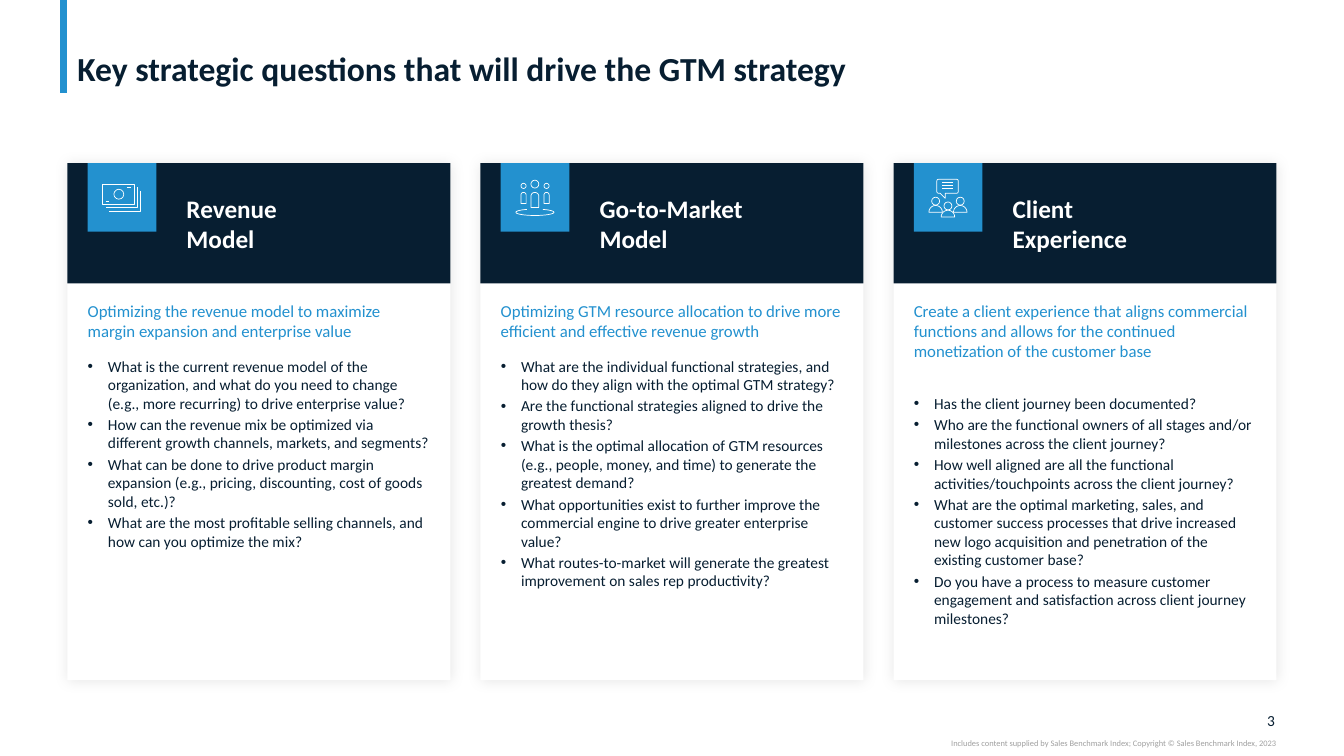
from math import cos, radians, sin

from lxml import etree
from pptx import Presentation
from pptx.dml.color import RGBColor
from pptx.enum.shapes import MSO_CONNECTOR, MSO_SHAPE
from pptx.enum.text import MSO_ANCHOR, MSO_AUTO_SIZE, PP_ALIGN
from pptx.oxml import parse_xml
from pptx.oxml.ns import nsdecls, qn
from pptx.util import Cm, Pt

RECT, OVAL = MSO_SHAPE.RECTANGLE, MSO_SHAPE.OVAL
STRAIGHT = MSO_CONNECTOR.STRAIGHT
TOP, MIDDLE, BOTTOM = MSO_ANCHOR.TOP, MSO_ANCHOR.MIDDLE, MSO_ANCHOR.BOTTOM
LEFT, RIGHT = PP_ALIGN.LEFT, PP_ALIGN.RIGHT
NO_FIT = MSO_AUTO_SIZE.NONE

NAVY = RGBColor(0x07, 0x1E, 0x31)
BLUE = RGBColor(0x23, 0x91, 0xCF)
GREY = RGBColor(0xA0, 0xA0, 0xA0)
WHITE = RGBColor(0xFF, 0xFF, 0xFF)

CARD_X, CARD_Y, CARD_W, CARD_H, PITCH = 1.7, 4.11, 9.65, 13.03, 10.41
PAD, TEXT_W, TILE = 0.51, 8.64, 1.73

SHADOW = (
    f'<a:effectLst {nsdecls("a")}><a:outerShdw blurRad="127000" dist="0" algn="ctr" rotWithShape="0">'
    '<a:srgbClr val="000000"><a:alpha val="10000"/></a:srgbClr></a:outerShdw></a:effectLst>'
)


def arc(x, y, rx, ry, start, end, steps=16):
    turns = [radians(start + (end - start) * i / steps) for i in range(steps + 1)]
    return [(x + rx * cos(t), y + ry * sin(t)) for t in turns]


def arch(x, y, w, h):
    r = w / 2
    return arc(x + r, y + r, r, r, 180, 360) + [(x + w, y + h), (x, y + h)]


class Deck:
    def __init__(self, slide):
        self.slide = slide
        self.shapes = slide.shapes
        self.font = {"name": "Calibri", "bold": False}

    def fill_text(self, shape, lines, size, color, bold=False, anchor=TOP, align=LEFT,
                  inset=0, spacing=1.0, after=0, bullet=False):
        frame = shape.text_frame
        box = {"word_wrap": True, "auto_size": NO_FIT, "vertical_anchor": anchor,
               "margin_left": Cm(inset), "margin_right": Cm(inset),
               "margin_top": 0, "margin_bottom": 0}
        para = {"alignment": align, "line_spacing": spacing,
                "space_before": Pt(0), "space_after": Pt(after)}
        font = {**self.font, "size": Pt(size), "bold": bold}
        for key, value in box.items():
            setattr(frame, key, value)
        for i, line in enumerate(lines):
            p = frame.add_paragraph() if i else frame.paragraphs[0]
            if bullet:
                self.mark(p)
            for key, value in para.items():
                setattr(p, key, value)
            run = p.add_run()
            run.text = line
            for key, value in font.items():
                setattr(run.font, key, value)
            run.font.color.rgb = color

    def mark(self, p):
        props = p._p.get_or_add_pPr()
        props.set("marL", str(Cm(PAD)))
        props.set("indent", str(-Cm(PAD)))
        tint = etree.SubElement(props, qn("a:buClr"))
        etree.SubElement(tint, qn("a:srgbClr"), val=str(NAVY))
        etree.SubElement(props, qn("a:buFont"), typeface="Arial")
        etree.SubElement(props, qn("a:buChar"), char="•")

    def text(self, x, y, w, h, lines, size, color, **style):
        box = self.shapes.add_textbox(Cm(x), Cm(y), Cm(w), Cm(h))
        self.fill_text(box, lines, size, color, **style)

    def holder(self, index, x, y, w, h, lines, size, color, **style):
        shape = next(s for s in self.slide.placeholders if s.placeholder_format.idx == index)
        place = {"left": x, "top": y, "width": w, "height": h}
        for key, value in place.items():
            setattr(shape, key, Cm(value))
        self.fill_text(shape, lines, size, color, **style)
        shape.element.getparent().append(shape.element)

    def block(self, x, y, w, h, color, glow=False):
        shape = self.shapes.add_shape(RECT, Cm(x), Cm(y), Cm(w), Cm(h))
        shape.shadow.inherit = False
        shape.fill.solid()
        shape.fill.fore_color.rgb = color
        shape.line.fill.background()
        if glow:
            props = shape.element.spPr
            props.remove(props.find(qn("a:effectLst")))
            props.append(parse_xml(SHADOW))

    def line(self, x1, y1, x2, y2, color, width, group=None):
        shapes = group.shapes if group else self.shapes
        line = shapes.add_connector(STRAIGHT, Cm(x1), Cm(y1), Cm(x2), Cm(y2))
        line.line.color.rgb = color
        line.line.width = Pt(width)
        etree.SubElement(line.element.spPr, qn("a:effectLst"))

    def thin(self, shape):
        shape.shadow.inherit = False
        shape.fill.background()
        shape.line.color.rgb = WHITE
        shape.line.width = Pt(0.5)

    def icon(self, x, y, parts):
        group = self.shapes.add_group_shape()
        for kind, data in parts:
            if kind == "trace":
                points, closed = data
                spots = [(Cm(x + a), Cm(y + b)) for a, b in points]
                pen = group.shapes.build_freeform(*spots[0])
                pen.add_line_segments(spots[1:], close=closed)
                self.thin(pen.convert_to_shape())
            elif kind == "line":
                a, b, c, d = data
                self.line(x + a, y + b, x + c, y + d, WHITE, 0.5, group)
            else:
                a, b, w, h = data
                self.thin(group.shapes.add_shape(kind, Cm(x + a), Cm(y + b), Cm(w), Cm(h)))


MONEY = [
    (RECT, (0.38, 0.53, 0.79, 0.51)),
    *[("trace", ([(1.17 + s, 0.53 + s), (1.17 + s, 1.04 + s), (0.38 + s, 1.04 + s)], False))
      for s in (0.08, 0.17)],
    (OVAL, (0.66, 0.66, 0.25, 0.25)),
    ("line", (0.46, 0.97, 0.53, 0.97)),
    ("line", (0.99, 0.61, 1.09, 0.61)),
]
TEAM = [
    *[(OVAL, (x, y, w, w)) for x, y, w in ((0.76, 0.43, 0.2), (1.09, 0.51, 0.13), (0.51, 0.51, 0.13))],
    *[("trace", (arch(x, 0.74, w, h), True))
      for x, w, h in ((0.76, 0.2, 0.38), (1.09, 0.13, 0.28), (0.51, 0.13, 0.28))],
    ("trace", (arc(0.86, 1.24, 0.48, 0.08, -65, 245, 40), False)),
]
BUBBLE = [
    *arc(0.62, 0.45, 0.04, 0.04, 180, 270, 4), *arc(1.08, 0.45, 0.04, 0.04, 270, 360, 4),
    *arc(1.08, 0.72, 0.04, 0.04, 0, 90, 4), (0.79, 0.76), (0.79, 0.89), (0.66, 0.76),
    *arc(0.62, 0.72, 0.04, 0.04, 90, 180, 4),
]
PEOPLE = [(1.0, 0.86), (0.38, 0.86), (0.69, 0.98)]
CLIENTS = [
    ("trace", (BUBBLE, True)),
    *[(OVAL, (x + 0.07, y, 0.2, 0.2)) for x, y in PEOPLE],
    *[("trace", (arch(x, y + 0.21, 0.34, 0.17), True)) for x, y in PEOPLE],
    *[("line", (0.71, y, 0.99, y)) for y in (0.48, 0.56, 0.64)],
]

CARDS = [
    (1, MONEY, ["Revenue", "Model"],
     "Optimizing the revenue model to maximize margin expansion and enterprise value", 8.99,
     ["What is the current revenue model of the organization, and what do you need to change (e.g., more recurring) to drive enterprise value?",
      "How can the revenue mix be optimized via different growth channels, markets, and segments?",
      "What can be done to drive product margin expansion (e.g., pricing, discounting, cost of goods sold, etc.)?",
      "What are the most profitable selling channels, and how can you optimize the mix?"]),
    (2, TEAM, ["Go-to-Market", "Model"],
     "Optimizing GTM resource allocation to drive more efficient and effective revenue growth", 8.99,
     ["What are the individual functional strategies, and how do they align with the optimal GTM strategy?",
      "Are the functional strategies aligned to drive the growth thesis?",
      "What is the optimal allocation of GTM resources (e.g., people, money, and time) to generate the greatest demand?",
      "What opportunities exist to further improve the commercial engine to drive greater enterprise value?",
      "What routes-to-market will generate the greatest improvement on sales rep productivity?"]),
    (4, CLIENTS, ["Client", "Experience"],
     "Create a client experience that aligns commercial functions and allows for the continued monetization of the customer base", 9.93,
     ["Has the client journey been documented?",
      "Who are the functional owners of all stages and/or milestones across the client journey?",
      "How well aligned are all the functional activities/touchpoints across the client journey?",
      "What are the optimal marketing, sales, and customer success processes that drive increased new logo acquisition and penetration of the existing customer base?",
      "Do you have a process to measure customer engagement and satisfaction across client journey milestones?"]),
]


def main():
    prs = Presentation()
    prs.slide_width, prs.slide_height = Cm(33.87), Cm(19.05)
    deck = Deck(prs.slides.add_slide(prs.slide_layouts[4]))
    deck.line(1.6, 0, 1.6, 2.34, BLUE, 5)
    deck.holder(0, 1.7, 0.1, 30.45, 2.13, ["Key strategic questions that will drive the GTM strategy"],
                24, NAVY, bold=True, anchor=BOTTOM, inset=0.25, spacing=0.9)
    for i, (index, icon, head, lead, top, points) in enumerate(CARDS):
        x = CARD_X + i * PITCH
        left = x + PAD
        deck.block(x, CARD_Y, CARD_W, CARD_H, WHITE, glow=True)
        deck.block(x, CARD_Y, CARD_W, 3.03, NAVY)
        deck.block(left, CARD_Y, TILE, TILE, BLUE)
        deck.icon(left, CARD_Y, icon)
        deck.text(x + 3, 4.85, 6.15, 1.55, head, 18, WHITE, bold=True, anchor=MIDDLE)
        deck.text(left, 7.57, TEXT_W, top - 7.97, [lead], 12, BLUE)
        deck.holder(index, left, top, TEXT_W, 6.4, points, 11, NAVY, after=2, bullet=True)
    deck.text(31.29, 17.91, 0.84, 0.48, ["3"], 11, NAVY, anchor=MIDDLE, align=RIGHT)
    deck.text(19.05, 18.59, 13.11, 0.25,
              ["Includes content supplied by Sales Benchmark Index; Copyright © Sales Benchmark Index, 2023"],
              6, GREY, align=RIGHT)
    for shape in list(deck.slide.placeholders):
        if not shape.text_frame.text:
            shape.element.getparent().remove(shape.element)
    prs.save("out.pptx")


if __name__ == "__main__":
    main()
